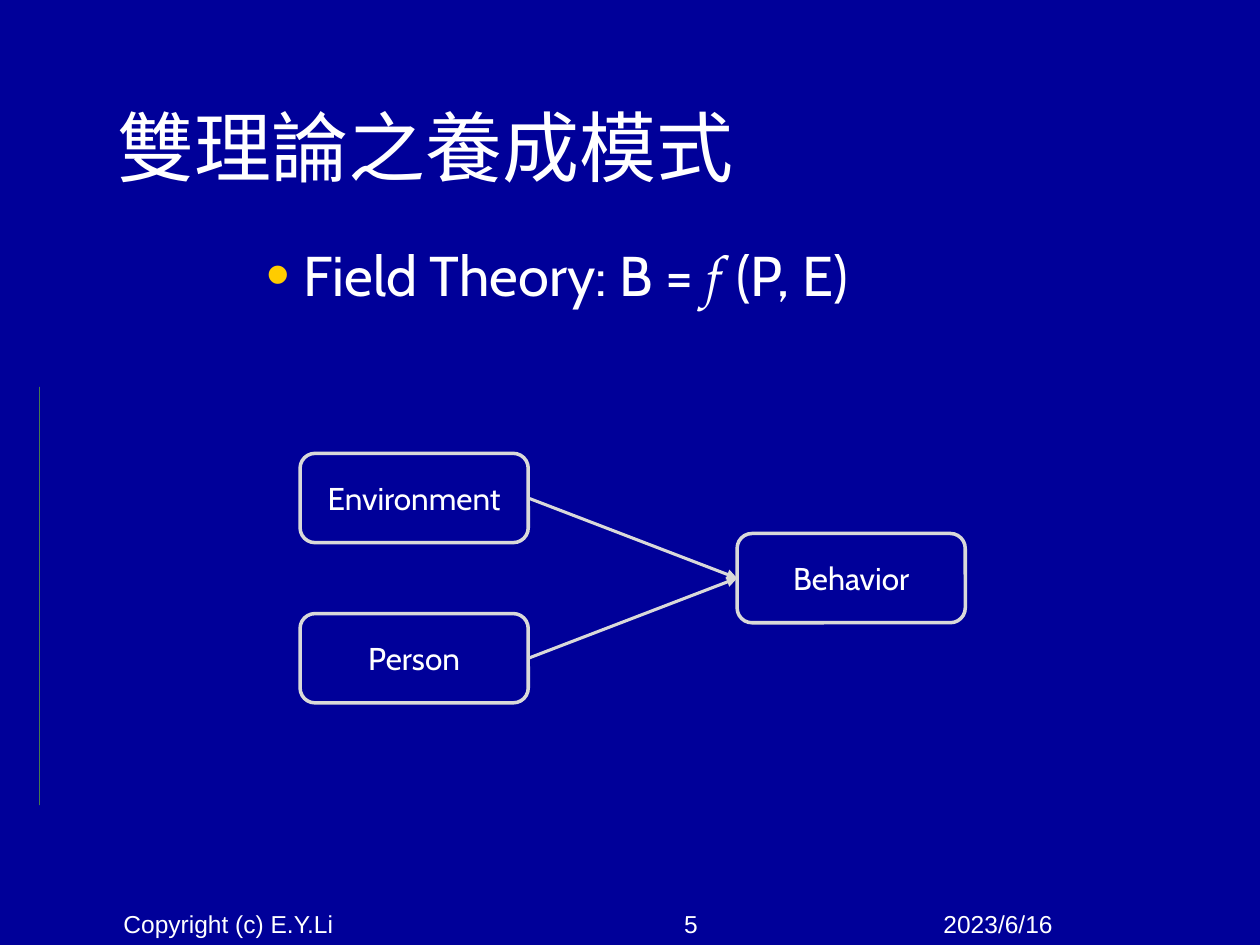
from collections import namedtuple
from dataclasses import dataclass

from lxml.etree import SubElement
from pptx import Presentation
from pptx.dml.color import RGBColor
from pptx.enum.shapes import MSO_CONNECTOR, MSO_SHAPE
from pptx.enum.text import MSO_ANCHOR, MSO_AUTO_SIZE, PP_ALIGN
from pptx.oxml.ns import qn
from pptx.util import Cm, Pt

Box = namedtuple("Box", "left top width height")


@dataclass(frozen=True)
class Theme:
    background: str = "000099"
    text: str = "FFFFFF"
    bullet: str = "FFCC00"
    outline: str = "D9D9D9"
    accent: str = "6BBA27"
    heading_font: str = "Cabin"
    formula_font: str = "TeX Gyre Pagella"
    footer_font: str = "Arial"
    title_size: int = 44
    body_size: int = 32
    node_size: int = 18
    footer_size: int = 14
    node_line: float = 2
    arrow_line: float = 1.75


THEME = Theme()


def apply(target, values):
    for name, value in values.items():
        setattr(target, name, value)


def place(sp, box):
    apply(sp, {name: Cm(value) for name, value in box._asdict().items()})


def paint(fill, color):
    fill.solid()
    fill.fore_color.rgb = RGBColor.from_string(color)


def add_run(p, text, size, font, italic=False):
    r = p.add_run()
    r.text = text
    apply(r.font, {"size": Pt(size), "name": font, "italic": italic})
    r.font.color.rgb = RGBColor.from_string(THEME.text)


def set_frame(sp, anchor, align):
    tf = sp.text_frame
    apply(tf, {"word_wrap": True, "auto_size": MSO_AUTO_SIZE.NONE,
               "vertical_anchor": anchor})
    p = tf.paragraphs[0]
    apply(p, {"alignment": align, "space_before": Pt(0)})
    return p


def add_bullet(p, char, indent):
    pPr = p._p.get_or_add_pPr()
    apply_attrs = {"marL": indent, "indent": -indent}
    for name, value in apply_attrs.items():
        pPr.set(name, str(value))
    color = SubElement(pPr, qn("a:buClr"))
    SubElement(color, qn("a:srgbClr"), val=THEME.bullet)
    SubElement(pPr, qn("a:buSzPct"), val="120000")
    SubElement(pPr, qn("a:buFont"), typeface=THEME.footer_font)
    SubElement(pPr, qn("a:buChar"), char=char)


def build_title(s, box):
    sp = s.shapes.title
    place(sp, box)
    p = set_frame(sp, MSO_ANCHOR.BOTTOM, PP_ALIGN.LEFT)
    add_run(p, "雙理論之養成模式", THEME.title_size, THEME.heading_font)


def build_formula(s, box):
    sp = s.placeholders[1]
    place(sp, box)
    p = set_frame(sp, MSO_ANCHOR.TOP, PP_ALIGN.LEFT)
    add_bullet(p, "•", Cm(0.76))
    add_run(p, "Field Theory: B = ", THEME.body_size, THEME.heading_font)
    add_run(p, "f ", THEME.body_size, THEME.formula_font, italic=True)
    add_run(p, "(P, E)", THEME.body_size, THEME.heading_font)


def add_node(shapes, text, box):
    sp = shapes.add_shape(MSO_SHAPE.ROUNDED_RECTANGLE, *map(Cm, box))
    sp.shadow.inherit = False
    sp.fill.background()
    paint(sp.line.fill, THEME.outline)
    sp.line.width = Pt(THEME.node_line)
    p = set_frame(sp, MSO_ANCHOR.MIDDLE, PP_ALIGN.CENTER)
    add_run(p, text, THEME.node_size, THEME.heading_font)
    return sp


def add_arrow(shapes, source, target):
    line = shapes.add_connector(MSO_CONNECTOR.STRAIGHT, 0, 0, 0, 0)
    line.begin_connect(source, 3)
    line.end_connect(target, 1)
    paint(line.line.fill, THEME.outline)
    line.line.width = Pt(THEME.arrow_line)
    SubElement(line.line._get_or_add_ln(), qn("a:tailEnd"), type="triangle")
    SubElement(line._element.spPr, qn("a:effectLst"))


def build_model(s, box):
    shapes = s.shapes.add_group_shape().shapes
    width, height = 4.6, 1.8
    drop = box.height - height
    causes = [
        add_node(shapes, text, Box(box.left, box.top + i * drop, width, height))
        for i, text in enumerate(("Environment", "Person"))
    ]
    effect = add_node(shapes, "Behavior", Box(
        box.left + box.width - width, box.top + drop / 2, width, height))
    for cause in causes:
        add_arrow(shapes, cause, effect)


def build_accent(s, box):
    sp = s.shapes.add_shape(MSO_SHAPE.RECTANGLE, *map(Cm, box))
    sp.shadow.inherit = False
    paint(sp.fill, THEME.accent)
    sp.line.fill.background()


def build_footer(s, box):
    parts = (
        ("Copyright (c) E.Y.Li", 0, 8.05, PP_ALIGN.CENTER),
        ("5", 10.39, 5.92, PP_ALIGN.CENTER),
        ("2023/6/16", box.width - 5.92, 5.92, PP_ALIGN.LEFT),
    )
    for text, offset, width, align in parts:
        area = Box(box.left + offset, box.top, width, box.height)
        sp = s.shapes.add_textbox(*map(Cm, area))
        p = set_frame(sp, MSO_ANCHOR.BOTTOM, align)
        add_run(p, text, THEME.footer_size, THEME.footer_font)


def main():
    prs = Presentation()
    apply(prs, {"slide_width": Cm(25.4), "slide_height": Cm(19.05)})
    s = prs.slides.add_slide(prs.slide_layouts[0])
    paint(s.background.fill, THEME.background)
    build_accent(s, Box(0.79, 7.8, 0.01, 8.43))
    build_footer(s, Box(0.58, 17.73, 24.11, 1.32))
    build_title(s, Box(2.11, 0, 21.01, 3.99))
    build_formula(s, Box(5.11, 4.72, 15.01, 11.81))
    build_model(s, Box(6.05, 9.14, 13.41, 5.03))
    prs.save("out.pptx")


if __name__ == "__main__":
    main()
